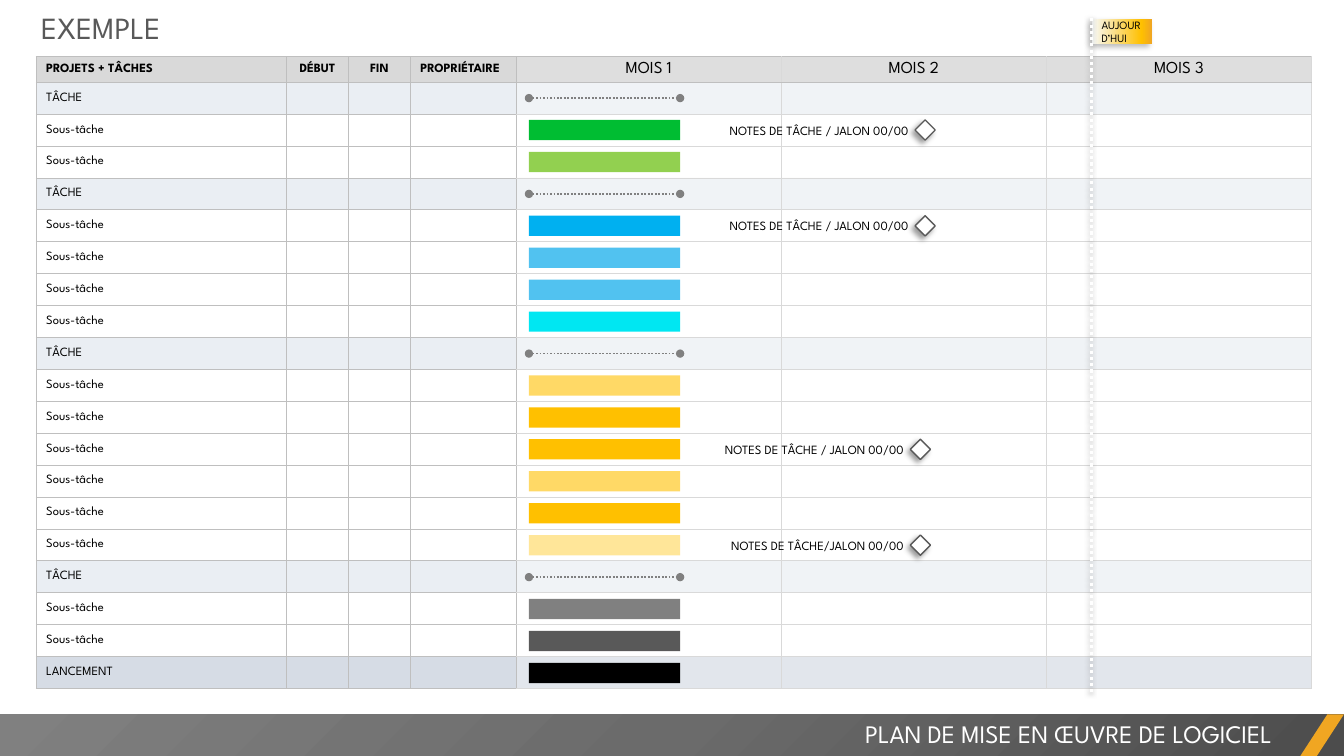
import pptx
import pptx.dml.color
import pptx.enum.dml
import pptx.enum.shapes
import pptx.enum.text
import pptx.oxml
import pptx.oxml.ns
import pptx.util

Cm = pptx.util.Cm
Pt = pptx.util.Pt
RGB = pptx.dml.color.RGBColor
qn = pptx.oxml.ns.qn
SHAPE = pptx.enum.shapes.MSO_SHAPE
ALIGN = pptx.enum.text.PP_ALIGN
MIDDLE = pptx.enum.text.MSO_ANCHOR.MIDDLE
NS = pptx.oxml.ns.nsdecls("a")

BLACK, WHITE = RGB(0, 0, 0), RGB(255, 255, 255)
CHARCOAL, DIM, GRAY = RGB(0x4C, 0x4C, 0x4C), RGB(0x6B, 0x6B, 0x6B), RGB(0x80, 0x80, 0x80)
SLATE, BORDER, PALE = RGB(0x59, 0x59, 0x59), RGB(0xBF, 0xBF, 0xBF), RGB(0xD9, 0xD9, 0xD9)
TASK, LAUNCH, ICE = RGB(0xEA, 0xEE, 0xF3), RGB(0xD6, 0xDC, 0xE5), RGB(0xF7, 0xFA, 0xFD)
GREEN, LIME = RGB(0x00, 0xBD, 0x32), RGB(0x92, 0xD0, 0x50)
BLUE, SKY, CYAN = RGB(0x00, 0xB0, 0xF0), RGB(0x51, 0xC2, 0xF0), RGB(0x00, 0xE7, 0xF2)
ORANGE, GOLD = RGB(0xF0, 0xA6, 0x22), RGB(0xFF, 0xC0, 0x00)
YELLOW, CREAM = RGB(0xFF, 0xD9, 0x66), RGB(0xFF, 0xE6, 0x99)

HEADERS = ["PROJETS + TÂCHES", "DÉBUT", "FIN", "PROPRIÉTAIRE", "MOIS 1", "MOIS 2", "MOIS 3"]
COLUMNS = [6.31, 1.56, 1.56, 2.67, 6.68, 6.68, 6.68]
FIRST_MONTH = 4
PHASES = [[GREEN, LIME], [BLUE, SKY, SKY, CYAN],
          [YELLOW, GOLD, GOLD, YELLOW, GOLD, CREAM], [GRAY, SLATE]]
ROWS = []
for bars in PHASES:
    ROWS += [("TÂCHE", TASK, None)] + [("Sous-tâche", WHITE, bar) for bar in bars]
ROWS.append(("LANCEMENT", LAUNCH, BLACK))

LEFT, TOP, HEADER_H, TABLE_H = 0.91, 1.43, 0.64, 15.93
ROW_H = (TABLE_H - HEADER_H) / len(ROWS)
BAR_X, BAR_W, BAR_H = 13.33, 3.81, 0.51
NOTE = "NOTES DE TÂCHE / JALON 00/00"
MILESTONES = [(1, 23.06, NOTE), (4, 23.06, NOTE), (11, 22.94, NOTE),
              (14, 22.94, "NOTES DE TÂCHE/JALON 00/00")]
TODAY_X = 27.51


class Plan:
    """Draws the elements of the plan on one slide in a single style."""

    def __init__(self, prs, font="League Spartan"):
        self.s = prs.slides.add_slide(prs.slide_layouts[6])
        self.font = font

    def fill_text(self, tf, text, size, color=BLACK, align=ALIGN.LEFT, bold=False):
        tf.word_wrap = True
        p = tf.paragraphs[0]
        p.text, p.alignment = text, align
        p.font.name, p.font.size, p.font.bold = self.font, Pt(size), bold
        p.font.color.rgb = color

    def text(self, x, y, w, h, text, size, color=BLACK, align=ALIGN.LEFT, grow=False):
        tf = self.s.shapes.add_textbox(Cm(x), Cm(y), Cm(w), Cm(h)).text_frame
        self.fill_text(tf, text, size, color, align)
        if grow:
            tf.auto_size = pptx.enum.text.MSO_AUTO_SIZE.SHAPE_TO_FIT_TEXT
        else:
            tf.vertical_anchor = MIDDLE

    def shape(self, kind, x, y, w, h, fill=None, line=None):
        sp = self.s.shapes.add_shape(kind, Cm(x), Cm(y), Cm(w), Cm(h))
        sp.shadow.inherit = False
        if fill is None:
            sp.fill.background()
        else:
            sp.fill.solid()
            sp.fill.fore_color.rgb = fill
        if line is None:
            sp.line.fill.background()
        else:
            sp.line.color.rgb, sp.line.width = line, Pt(1)
        return sp

    def gradient(self, x, y, w, h, stops, direction):
        sp = self.shape(SHAPE.RECTANGLE, x, y, w, h)
        gs = "".join(f'<a:gs pos="{pos * 1000}"><a:srgbClr val="{color}"/></a:gs>'
                     for pos, color in stops)
        spPr = sp._element.spPr
        spPr.replace(spPr.find(qn("a:noFill")), pptx.oxml.parse_xml(
            f'<a:gradFill {NS} rotWithShape="1"><a:gsLst>{gs}</a:gsLst>{direction}</a:gradFill>'))
        return sp

    def shadow(self, sp, color, alpha, blur, dist):
        effects = sp._element.spPr.find(qn("a:effectLst"))
        effects.append(pptx.oxml.parse_xml(
            f'<a:outerShdw {NS} blurRad="{Pt(blur)}" dist="{Pt(dist)}" dir="8100000" '
            f'algn="tr" rotWithShape="0"><a:srgbClr val="{color}">'
            f'<a:alpha val="{alpha * 1000}"/></a:srgbClr></a:outerShdw>'))

    def line(self, x1, y1, x2, y2, color, width, dots=False):
        cx = self.s.shapes.add_connector(
            pptx.enum.shapes.MSO_CONNECTOR.STRAIGHT, Cm(x1), Cm(y1), Cm(x2), Cm(y2))
        cx.line.color.rgb, cx.line.width = color, Pt(width)
        cx.line.dash_style = pptx.enum.dml.MSO_LINE.ROUND_DOT
        if dots:
            for end in ("headEnd", "tailEnd"):
                cx.line._ln.append(pptx.oxml.parse_xml(f'<a:{end} {NS} type="oval"/>'))
        cx._element.spPr.append(pptx.oxml.parse_xml(f"<a:effectLst {NS}/>"))
        return cx

    def cell(self, cell, row, col, fill, alpha):
        tcPr = cell._tc.get_or_add_tcPr()
        for side in "LRTB":
            dark = (col < FIRST_MONTH or (side == "L" and col == FIRST_MONTH)
                    or (side == "T" and row <= 1) or (side == "B" and row == 0))
            tcPr.append(pptx.oxml.parse_xml(
                f'<a:ln{side} {NS} w="{Pt(0.5)}"><a:solidFill>'
                f'<a:srgbClr val="{BORDER if dark else PALE}"/></a:solidFill></a:ln{side}>'))
        cell.fill.solid()
        cell.fill.fore_color.rgb = fill
        if alpha < 100:
            tcPr.find(qn("a:solidFill"))[0].append(
                pptx.oxml.parse_xml(f'<a:alpha {NS} val="{alpha * 1000}"/>'))
        cell.vertical_anchor = MIDDLE

    def table(self):
        table = self.s.shapes.add_table(len(ROWS) + 1, len(COLUMNS), Cm(LEFT), Cm(TOP),
                                        Cm(sum(COLUMNS)), Cm(TABLE_H)).table
        table.first_row = table.horz_banding = False
        for column, width in zip(table.columns, COLUMNS):
            column.width = Cm(width)
        for i, row in enumerate(table.rows):
            row.height = Cm(ROW_H if i else HEADER_H)
            for j, cell in enumerate(row.cells):
                month = j >= FIRST_MONTH
                if i == 0:
                    fill, alpha = (BORDER, 50) if month else (PALE, 100)
                    align = ALIGN.LEFT if j in (0, 3) else ALIGN.CENTER
                    self.fill_text(cell.text_frame, HEADERS[j], 12 if month else 9,
                                   align=align, bold=not month)
                    if month:
                        cell.margin_left = cell.margin_right = 0
                        cell.margin_top = cell.margin_bottom = 0
                else:
                    label, fill, _ = ROWS[i - 1]
                    alpha = 100 if not month else 50 if fill == WHITE else 70
                    self.fill_text(cell.text_frame, "" if j else label, 9)
                self.cell(cell, i, j, fill, alpha)

    def bars(self):
        for i, (_, _, color) in enumerate(ROWS):
            y = middle(i)
            if color is None:
                self.line(BAR_X, y, BAR_X + BAR_W, y, GRAY, 1.25, dots=True)
            else:
                self.shape(SHAPE.RECTANGLE, BAR_X, y - BAR_H / 2, BAR_W, BAR_H, color)

    def today(self):
        tag = self.gradient(TODAY_X, 0.48, 1.52, 0.64, [(0, ICE), (83, GOLD), (100, ORANGE)],
                            '<a:lin ang="0" scaled="0"/>')
        self.shadow(tag, BLACK, 25, 4, 3)
        self.fill_text(tag.text_frame, "AUJOURD’HUI", 8)
        tag.text_frame.vertical_anchor = MIDDLE
        marker = self.line(TODAY_X, 0.46, TODAY_X, 17.48, WHITE, 2.25)
        self.shadow(marker, GRAY, 50, 3, 1)
        self.s.shapes.add_group_shape([tag, marker])

    def milestone(self, row, x, note):
        y, size, h = middle(row), 0.51, 0.76
        diamond = self.shape(SHAPE.DIAMOND, x, y - size / 2, size, size, WHITE, SLATE)
        self.shadow(diamond, BLACK, 40, 4, 3)
        self.text(x - 5.51, y - h / 2, 5.59, h, note, 9, align=ALIGN.RIGHT)

    def footer(self):
        self.gradient(0, 18, 33.87, 1.05, [(0, CHARCOAL), (50, DIM), (100, GRAY)],
                      '<a:path path="circle"><a:fillToRect l="100000" t="100000"/></a:path>')
        accent = self.shape(SHAPE.PARALLELOGRAM, 32.77, 18, 1.1, 1.05, ORANGE)
        accent.adjustments[0] = 0.65
        self.text(13.34, 17.98, 18.97, 1.02, "PLAN DE MISE EN ŒUVRE DE LOGICIEL", 18,
                  WHITE, ALIGN.RIGHT, grow=True)


def middle(row):
    return TOP + HEADER_H + (row + 0.5) * ROW_H


def main():
    prs = pptx.Presentation()
    prs.slide_width, prs.slide_height = Cm(33.87), Cm(19.05)
    plan = Plan(prs)
    plan.footer()
    plan.table()
    plan.bars()
    plan.today()
    for milestone in MILESTONES:
        plan.milestone(*milestone)
    plan.text(0.79, 0.1, 16.81, 1.19, "EXEMPLE", 22, SLATE, grow=True)
    prs.save("out.pptx")


if __name__ == "__main__":
    main()
